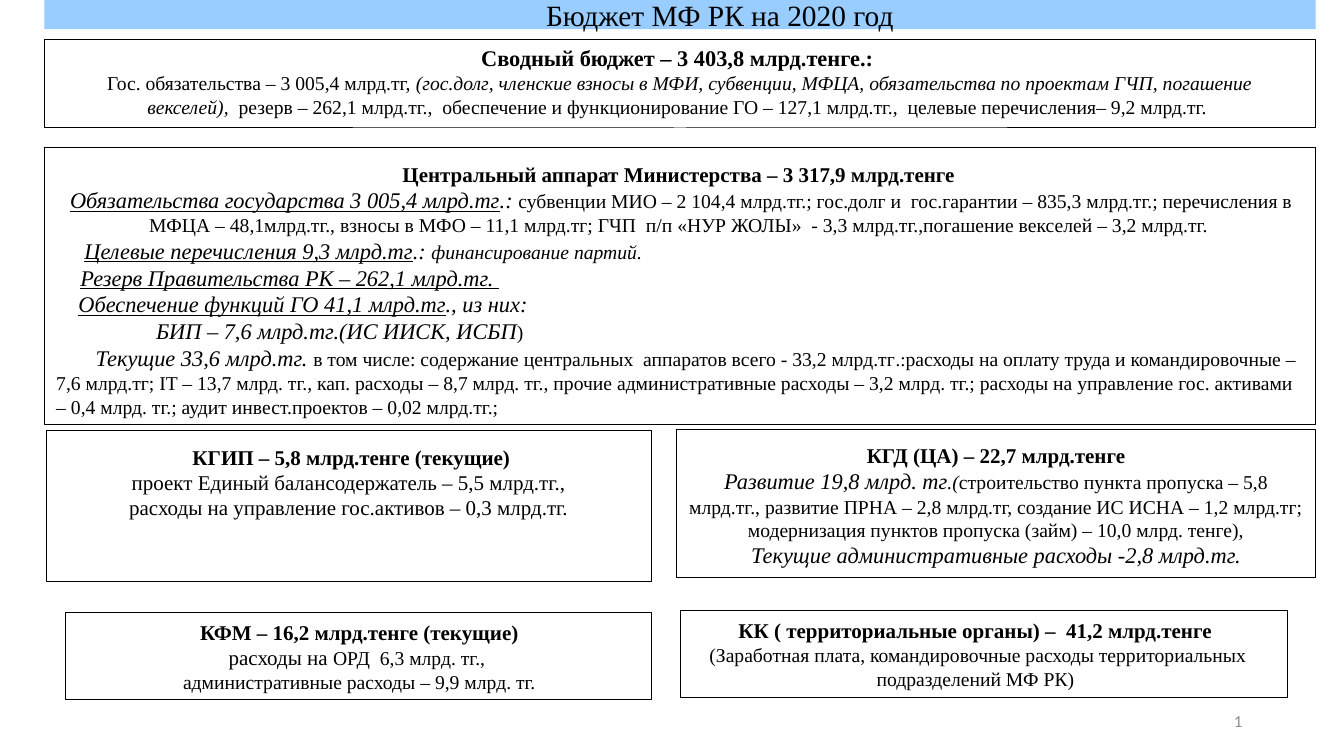
from dataclasses import dataclass
from typing import NamedTuple

from lxml.etree import SubElement
from pptx import Presentation
from pptx.dml.color import RGBColor
from pptx.enum.shapes import MSO_SHAPE as Shape
from pptx.enum.text import MSO_ANCHOR as Anchor, MSO_AUTO_SIZE as AutoSize, PP_ALIGN as Align
from pptx.oxml.ns import qn
from pptx.text.text import Font, TextFrame
from pptx.util import Emu, Pt

PX = 9144  # 100 px to the inch
BLACK = RGBColor(0x00, 0x00, 0x00)
BANNER_BLUE = RGBColor(0x99, 0xCC, 0xFF)
NUMBER_GREY = RGBColor(0x8C, 0x8C, 0x8C)
SERIF = "Times New Roman"


class Box(NamedTuple):
    left: int
    top: int
    width: int
    height: int

    def emu(self) -> list[Emu]:
        return [Emu(side * PX) for side in self]


class Span(NamedTuple):
    text: str
    size: float = 14
    bold: bool = False
    italic: bool = False
    underline: bool = False


@dataclass
class Line:
    spans: list[Span]
    align: Align = Align.CENTER
    margin: int = 0
    first_indent: int = 0


@dataclass
class Panel:
    frame: Box
    text_area: Box
    lines: list[Line]


def heading(text: str, size: float = 15) -> Line:
    return Line([Span(text, size, bold=True)])


def item(*spans: Span, margin: int = 24) -> Line:
    return Line(list(spans), Align.LEFT, margin)


def accent(text: str, underline: bool = False) -> Span:
    return Span(text, 16, italic=True, underline=underline)


PANELS = [
    Panel(Box(44, 39, 1261, 88), Box(72, 39, 1205, 84), [
        heading("Сводный бюджет – 3 403,8 млрд.тенге.: ", 16),
        Line([
            Span("Гос. обязательства – 3 005,4 млрд.тг, "),
            Span("(гос.долг, членские взносы в МФИ, субвенции, МФЦА, обязательства по "
                 "проектам ГЧП, погашение векселей),  ", italic=True),
            Span("резерв – 262,1 млрд.тг.,  обеспечение и функционирование ГО – "
                 "127,1 млрд.тг.,  целевые перечисления– 9,2 млрд.тг. "),
        ]),
    ]),
    Panel(Box(44, 146, 1261, 275), Box(46, 155, 1260, 268), [
        heading("Центральный аппарат Министерства – 3 317,9 млрд.тенге "),
        Line([
            accent("Обязательства государства 3 005,4 млрд.тг", underline=True),
            accent(".: "),
            Span("субвенции МИО – 2 104,4 млрд.тг.; гос.долг и  гос.гарантии – 835,3 млрд.тг.; "
                 "перечисления в МФЦА – 48,1млрд.тг., взносы в МФО – 11,1 млрд.тг; "
                 "ГЧП  п/п «НУР ЖОЛЫ»  - 3,3 млрд.тг.,погашение векселей – 3,2 млрд.тг. "),
        ]),
        item(accent("Целевые перечисления 9,3 млрд.тг", underline=True), accent(".: "),
             Span("финансирование партий.", italic=True), margin=28),
        item(accent("Резерв Правительства РК – 262,1 млрд.тг. ", underline=True)),
        item(accent("Обеспечение функций ГО 41,1 млрд.тг", underline=True),
             accent("., из них:"), margin=22),
        item(accent("БИП – 7,6 млрд.тг.(ИС ИИСК, ИСБП"), Span(")"), margin=99),
        Line([
            accent("Текущие 33,6 млрд.тг. "),
            Span("в том числе: содержание центральных  аппаратов всего - 33,2 млрд.тг"),
            Span(".:", 13.5),
            Span("расходы на оплату труда и командировочные – 7,6 млрд.тг; IT – 13,7 млрд. тг., "
                 "кап. расходы – 8,7 млрд. тг., прочие административные расходы – 3,2 млрд. тг.; "
                 "расходы на управление гос. активами – 0,4 млрд. тг.; "
                 "аудит инвест.проектов – 0,02 млрд.тг.;"),
        ], Align.LEFT, first_indent=39),
    ]),
    Panel(Box(46, 427, 600, 150), Box(58, 436, 581, 86), [
        heading("КГИП – 5,8 млрд.тенге (текущие)"),
        Line([Span("проект Единый балансодержатель – 5,5 млрд.тг., ", 15)]),
        Line([Span("расходы на управление гос.активов – 0,3 млрд.тг. ", 15)]),
    ]),
    Panel(Box(671, 426, 634, 147), Box(671, 434, 634, 136), [
        heading("КГД (ЦА) – 22,7 млрд.тенге"),
        Line([
            accent("Развитие 19,8 млрд. тг"),
            Span(".(", italic=True),
            Span("строительство пункта пропуска – 5,8 млрд.тг., развитие ПРНА – 2,8 млрд.тг, "
                 "создание ИС ИСНА – 1,2 млрд.тг; модернизация пунктов пропуска (займ) – "
                 "10,0 млрд. тенге),"),
        ]),
        Line([accent("Текущие административные расходы -2,8 млрд.тг.")]),
    ]),
    Panel(Box(65, 608, 581, 86), Box(72, 610, 569, 84), [
        heading("КФМ – 16,2 млрд.тенге (текущие)"),
        Line([Span("расходы на ", 15), Span("ОРД  6,3 млрд. тг., ")]),
        Line([Span("административные расходы – 9,9 млрд. тг.")]),
    ]),
    Panel(Box(675, 606, 602, 86), Box(671, 608, 598, 82), [
        heading("КК ( территориальные органы) –  41,2 млрд.тенге "),
        Line([Span("(Заработная плата, командировочные расходы территориальных "
                   "подразделений МФ РК) ")]),
    ]),
]


def style_font(font: Font, name: str, size: float, color: RGBColor) -> None:
    font.name, font.size = name, Pt(size)
    font.color.rgb = color


def write_lines(frame: TextFrame, lines: list[Line]) -> None:
    for index, line in enumerate(lines):
        paragraph = frame.add_paragraph() if index else frame.paragraphs[0]
        paragraph.alignment = line.align
        properties = paragraph._p.get_or_add_pPr()
        properties.set("marL", str(line.margin * PX))
        properties.set("indent", str(line.first_indent * PX))
        for span in line.spans:
            run = paragraph.add_run()
            run.text = span.text
            style_font(run.font, SERIF, span.size, BLACK)
            run.font.bold, run.font.italic = span.bold, span.italic
            run.font.underline = span.underline


def add_panel(slide, panel: Panel) -> None:
    border = slide.shapes.add_shape(Shape.RECTANGLE, *panel.frame.emu())
    border.shadow.inherit = False
    border.fill.background()
    border.line.color.rgb = BLACK
    border.line.width = Pt(0.75)
    text_frame = slide.shapes.add_textbox(*panel.text_area.emu()).text_frame
    text_frame.word_wrap = True
    write_lines(text_frame, panel.lines)


def place_title(slide) -> None:
    title = slide.shapes.title
    title.left, title.top, title.width, title.height = Box(44, 0, 1261, 29).emu()
    title.fill.solid()
    title.fill.fore_color.rgb = BANNER_BLUE
    title.text_frame.auto_size = AutoSize.NONE
    title.text_frame.vertical_anchor = Anchor.MIDDLE
    write_lines(title.text_frame, [Line([Span("Бюджет МФ РК на 2020 год", 21)], margin=79)])


def add_slide_number(slide) -> None:
    frame = slide.shapes.add_textbox(*Box(942, 695, 300, 40).emu()).text_frame
    frame.word_wrap = True
    frame.vertical_anchor = Anchor.MIDDLE
    paragraph = frame.paragraphs[0]
    paragraph.alignment = Align.RIGHT
    field = SubElement(paragraph._p, qn("a:fld"), type="slidenum",
                       id="{B6F15528-21DE-4FAA-801E-634DDDAF4B2B}")
    style_font(Font(SubElement(field, qn("a:rPr"))), "Calibri", 12, NUMBER_GREY)
    SubElement(field, qn("a:t")).text = "1"


def main() -> None:
    deck = Presentation()
    deck.slide_width, deck.slide_height = Emu(1333 * PX), Emu(750 * PX)
    slide = deck.slides.add_slide(deck.slide_layouts[5])
    place_title(slide)
    for panel in PANELS:
        add_panel(slide, panel)
    add_slide_number(slide)
    deck.save("out.pptx")


if __name__ == "__main__":
    main()
